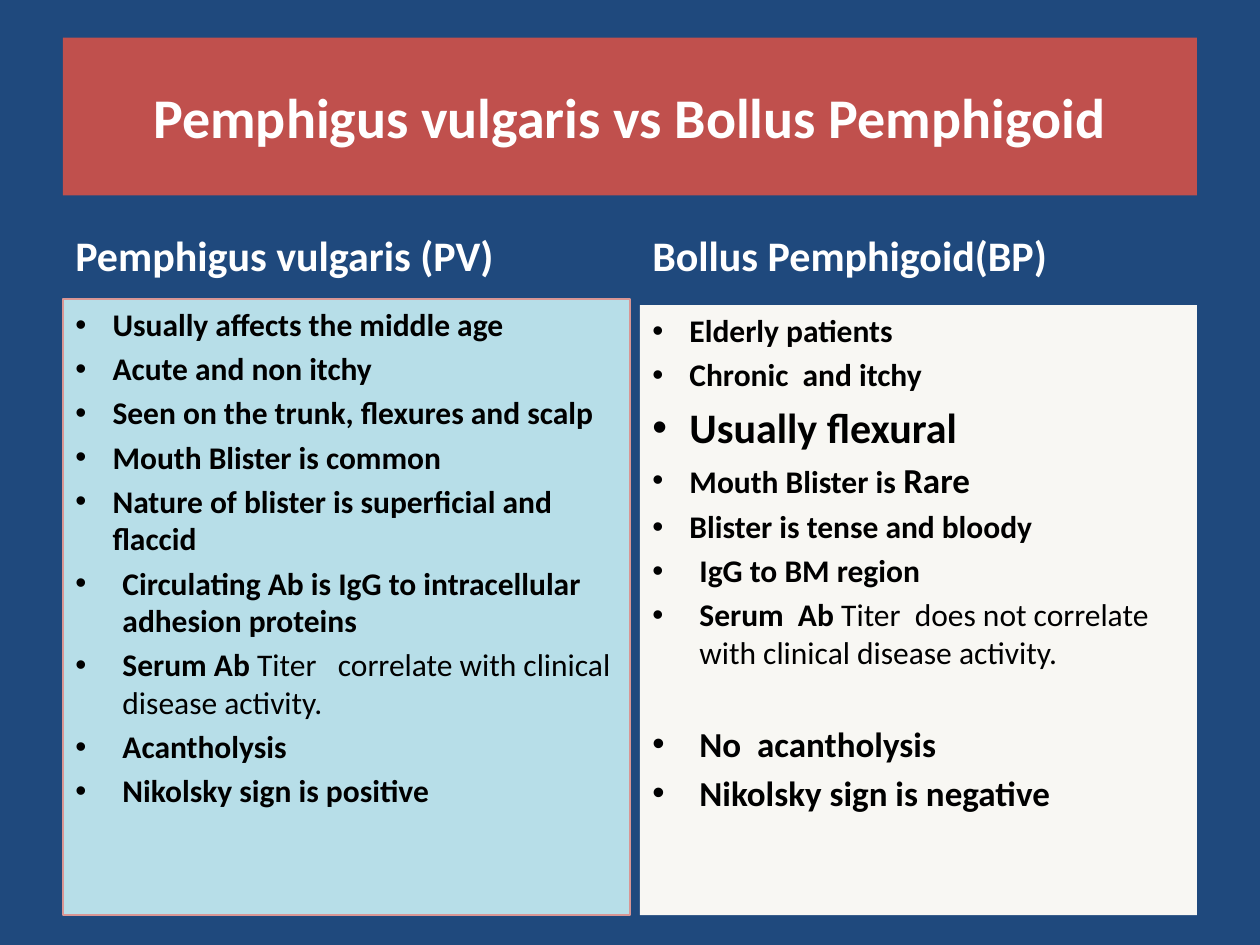
from lxml.etree import SubElement
from pptx import Presentation
from pptx.dml.color import RGBColor
from pptx.enum.shapes import MSO_SHAPE
from pptx.enum.text import MSO_ANCHOR as Anchor, PP_ALIGN as Align
from pptx.oxml.ns import qn
from pptx.util import Cm, Pt

COLORS = {
    "background": "1F497D",
    "banner": "C0504D",
    "pv_panel": "B7DEE8",
    "pv_border": "D99694",
    "bp_panel": "F8F7F3",
    "light": "FFFFFF",
    "dark": "000000",
}
FONT = "Calibri"
NARROW, WIDE = 0.75, 0.95  # hanging indents in cm
BLANK_LINE = 25.6  # points

# Each point: indent, space above in points, runs of (text, size, bold)
PV_POINTS = [
    (NARROW, 0, [("Usually affects the middle age", 18, True)]),
    (NARROW, 0, [("Acute and non itchy", 18, True)]),
    (NARROW, 0, [("Seen on the trunk, flexures and scalp", 18, True)]),
    (NARROW, 0, [("Mouth Blister is common", 18, True)]),
    (NARROW, 0, [("Nature of blister is superficial and flaccid", 18, True)]),
    (WIDE, 0, [("Circulating Ab is IgG to intracellular adhesion proteins", 18, True)]),
    (WIDE, 0, [("Serum Ab ", 18, True),
               ("Titer   correlate with clinical disease activity.", 18, False)]),
    (WIDE, 0, [("Acantholysis", 18, True)]),
    (WIDE, 0, [("Nikolsky sign is positive", 18, True)]),
]
BP_POINTS = [
    (NARROW, 0, [("Elderly patients", 18, True)]),
    (NARROW, 0, [("Chronic  and itchy", 18, True)]),
    (NARROW, 0, [("Usually flexural", 24, True)]),
    (NARROW, 0, [("Mouth Blister is ", 18, True), ("Rare", 20, True)]),
    (NARROW, 0, [("Blister is tense and bloody", 18, True)]),
    (WIDE, 0, [("IgG to BM region", 18, True)]),
    (WIDE, 0, [("Serum  Ab ", 18, True),
               ("Titer  does not correlate with clinical disease activity.", 18, False)]),
    (WIDE, BLANK_LINE, [("No  acantholysis", 20, True)]),
    (WIDE, 0, [("Nikolsky sign is negative", 20, True)]),
]


def rgb(name):
    return RGBColor.from_string(COLORS[name])


def style_font(font, size, color, bold=True):
    font.name = FONT
    font.size = Pt(size)
    font.bold = bold
    font.color.rgb = rgb(color)


def add_panel(slide, box, fill, border=None):
    panel = slide.shapes.add_shape(MSO_SHAPE.RECTANGLE, *map(Cm, box))
    panel.shadow.inherit = False
    panel.fill.solid()
    panel.fill.fore_color.rgb = rgb(fill)
    if border:
        panel.line.color.rgb = rgb(border)
        panel.line.width = Pt(0.75)
    else:
        panel.line.fill.background()
    return panel


def add_title(slide, box, text):
    frame = add_panel(slide, box, "banner").text_frame
    frame.word_wrap = True
    frame.vertical_anchor = Anchor.MIDDLE
    title = frame.paragraphs[0]
    title.text = text
    title.alignment = Align.CENTER
    style_font(title.font, 32, "light")


def add_heading(slide, box, text):
    frame = slide.shapes.add_textbox(*map(Cm, box)).text_frame
    frame.word_wrap = True
    frame.vertical_anchor = Anchor.BOTTOM
    heading = frame.paragraphs[0]
    heading.text = text
    style_font(heading.font, 24, "light")


def set_bullet(paragraph, indent):
    properties = paragraph._p.get_or_add_pPr()
    properties.set("marL", str(Cm(indent)))
    properties.set("indent", str(-Cm(indent)))
    SubElement(properties, qn("a:buFont")).set("typeface", "Arial")
    SubElement(properties, qn("a:buChar")).set("char", "•")


def add_points(panel, points):
    frame = panel.text_frame
    frame.word_wrap = True
    frame.vertical_anchor = Anchor.TOP
    for number, (indent, gap, runs) in enumerate(points):
        point = frame.add_paragraph() if number else frame.paragraphs[0]
        point.alignment = Align.LEFT
        largest = max(size for _, size, _ in runs)
        point.space_before = Pt(0.2 * largest + gap)
        set_bullet(point, indent)
        for text, size, bold in runs:
            run = point.add_run()
            run.text = text
            style_font(run.font, size, "dark", bold)


def main():
    deck = Presentation()
    deck.slide_width, deck.slide_height = Cm(25.4), Cm(19.05)
    slide = deck.slides.add_slide(deck.slide_layouts[6])
    slide.background.fill.solid()
    slide.background.fill.fore_color.rgb = rgb("background")

    add_title(slide, (1.27, 0.76, 22.86, 3.18), "Pemphigus vulgaris vs Bollus Pemphigoid")

    add_heading(slide, (1.27, 4.27, 11.23, 1.5), "Pemphigus vulgaris (PV)")
    pv_panel = add_panel(slide, (1.27, 6.03, 11.43, 12.42), "pv_panel", "pv_border")
    add_points(pv_panel, PV_POINTS)

    add_heading(slide, (12.9, 3.77, 11.23, 2), "Bollus Pemphigoid(BP)")
    bp_panel = add_panel(slide, (12.9, 6.15, 11.23, 12.3), "bp_panel")
    add_points(bp_panel, BP_POINTS)

    deck.save("out.pptx")


if __name__ == "__main__":
    main()
